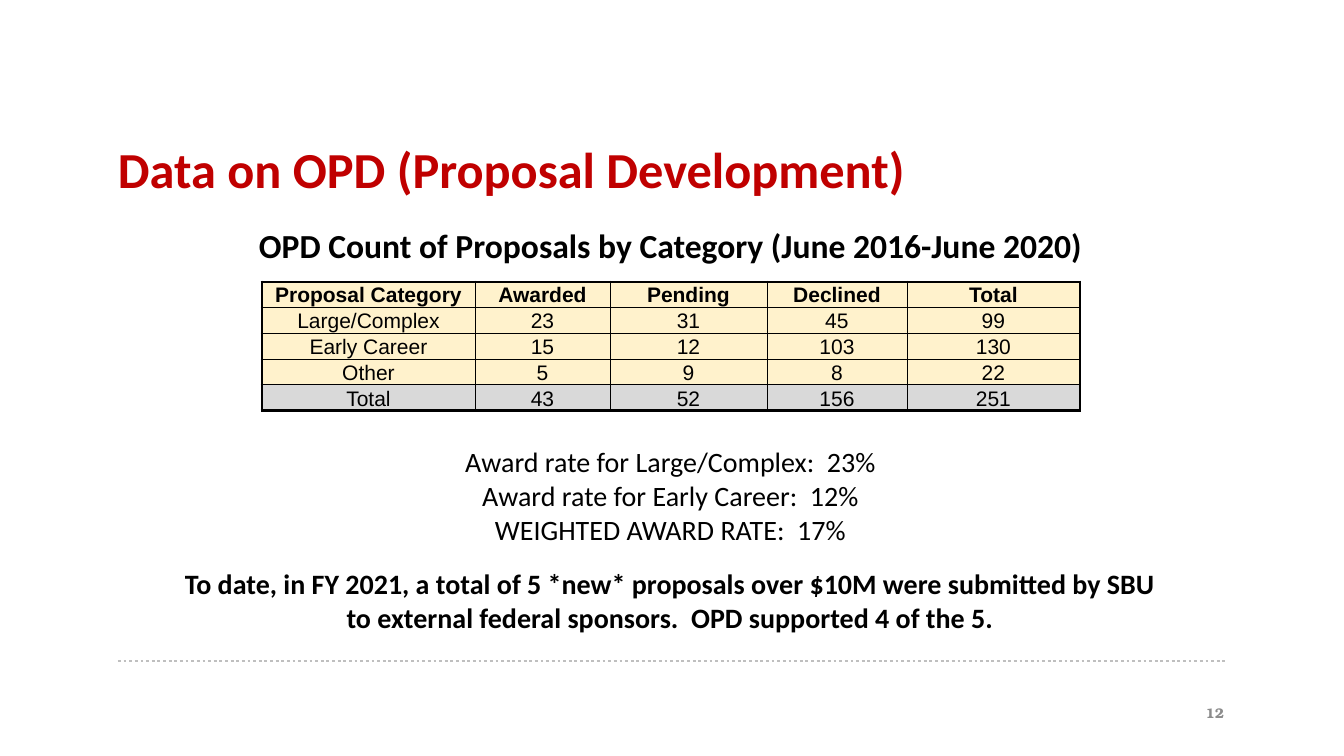
from lxml import etree
from pptx import Presentation
from pptx.dml.color import RGBColor
from pptx.enum.dml import MSO_LINE
from pptx.enum.shapes import MSO_CONNECTOR
from pptx.enum.text import MSO_ANCHOR, MSO_AUTO_SIZE, PP_ALIGN
from pptx.oxml.ns import qn
from pptx.util import Emu, Pt

LEFT, CENTER, RIGHT = PP_ALIGN.LEFT, PP_ALIGN.CENTER, PP_ALIGN.RIGHT
TOP, MIDDLE, BOTTOM = MSO_ANCHOR.TOP, MSO_ANCHOR.MIDDLE, MSO_ANCHOR.BOTTOM
STRAIGHT = MSO_CONNECTOR.STRAIGHT
DOTTED = MSO_LINE.ROUND_DOT
BLACK = RGBColor(0, 0, 0)
RED = RGBColor(0xC0, 0, 0)
CREAM = RGBColor(0xFF, 0xF2, 0xCC)
SILVER = RGBColor(0xD9, 0xD9, 0xD9)
RULE_GRAY = RGBColor(0xBF, 0xBF, 0xBF)
NUMBER_GRAY = RGBColor(0x8C, 0x8C, 0x8C)
SCALE = 914400 / 100.8


def px(n):
    return Emu(round(n * SCALE))


def write(tf, text, size=20, font="Calibri", color=BLACK, bold=False,
          align=CENTER, anchor=TOP, spacing=None):
    tf.word_wrap = True
    tf.vertical_anchor = anchor
    for i, line in enumerate(text.split("\n")):
        p = tf.paragraphs[0] if i == 0 else tf.add_paragraph()
        p.alignment = align
        if spacing:
            p.line_spacing = spacing
        r = p.add_run()
        r.text = line
        r.font.name = font
        r.font.size = Pt(size)
        r.font.bold = bold
        r.font.color.rgb = color


prs = Presentation()
prs.slide_width, prs.slide_height = px(1344), px(756)
s = prs.slides.add_slide(prs.slide_layouts[5])

# Dotted footer rule
rule = s.shapes.add_connector(STRAIGHT, px(118), px(661), px(1227), px(661))
rule.line.color.rgb = RULE_GRAY
rule.line.width = Pt(2)
rule.line.dash_style = DOTTED
etree.SubElement(rule._element.spPr, qn("a:effectLst"))

# Title
title = s.shapes.title
title.left, title.top, title.width, title.height = px(118), px(155), px(1109), px(117)
tf = title.text_frame
tf.auto_size = MSO_AUTO_SIZE.NONE
tf.margin_left = tf.margin_right = tf.margin_top = tf.margin_bottom = 0
write(tf, "Data on OPD (Proposal Development)", size=36, color=RED, bold=True,
      align=LEFT, spacing=0.7)

# Text boxes: table heading, award rates, closing note, slide number
boxes = [
    ((164, 220, 1013, 50), "OPD Count of Proposals by Category (June 2016-June 2020)",
     dict(size=24, bold=True)),
    ((422, 440, 497, 112),
     "Award rate for Large/Complex:  23%\n"
     "Award rate for Early Career:  12%\n"
     "WEIGHTED AWARD RATE:  17%", {}),
    ((163, 562, 1014, 78),
     "To date, in FY 2021, a total of 5 *new* proposals over $10M were submitted by SBU "
     "to external federal sponsors.  OPD supported 4 of the 5.", dict(bold=True)),
    ((932, 693, 302, 40), "12",
     dict(size=10, font="TeX Gyre Bonum", color=NUMBER_GRAY, bold=True,
          align=RIGHT, anchor=MIDDLE)),
]
for box, text, style in boxes:
    sp = s.shapes.add_textbox(*map(px, box))
    write(sp.text_frame, text, **style)

# Proposal table
rows = [
    ("Proposal Category", "Awarded", "Pending", "Declined", "Total"),
    ("Large/Complex", "23", "31", "45", "99"),
    ("Early Career", "15", "12", "103", "130"),
    ("Other", "5", "9", "8", "22"),
    ("Total", "43", "52", "156", "251"),
]
col_widths = [213, 135, 157, 140, 173]
row_heights = [25, 26, 26, 25, 26]
last_row, last_col = len(rows) - 1, len(col_widths) - 1
table = s.shapes.add_table(len(rows), len(col_widths), px(262), px(282),
                           px(sum(col_widths)), px(sum(row_heights))).table
table.first_row = table.horz_banding = False
for column, width in zip(table.columns, col_widths):
    column.width = px(width)
for row, height in zip(table.rows, row_heights):
    row.height = px(height)

for i, row in enumerate(rows):
    for j, text in enumerate(row):
        cell = table.cell(i, j)
        cell.margin_left = cell.margin_right = cell.margin_top = cell.margin_bottom = 0
        write(cell.text_frame, text, size=15, font="Arial", bold=i == 0)
        cell.vertical_anchor = BOTTOM
        cell.fill.solid()
        cell.fill.fore_color.rgb = SILVER if i == last_row else CREAM
        # Thick outer frame, thin inner grid
        outer = {"lnL": j == 0, "lnR": j == last_col, "lnT": i == 0, "lnB": i == last_row}
        tcPr = cell._tc.get_or_add_tcPr()
        for k, (side, thick) in enumerate(outer.items()):
            ln = etree.Element(qn("a:" + side), w=str(Pt(2.25 if thick else 0.5)))
            fill = etree.SubElement(ln, qn("a:solidFill"))
            etree.SubElement(fill, qn("a:srgbClr"), val=str(BLACK))
            tcPr.insert(k, ln)

prs.save("out.pptx")
